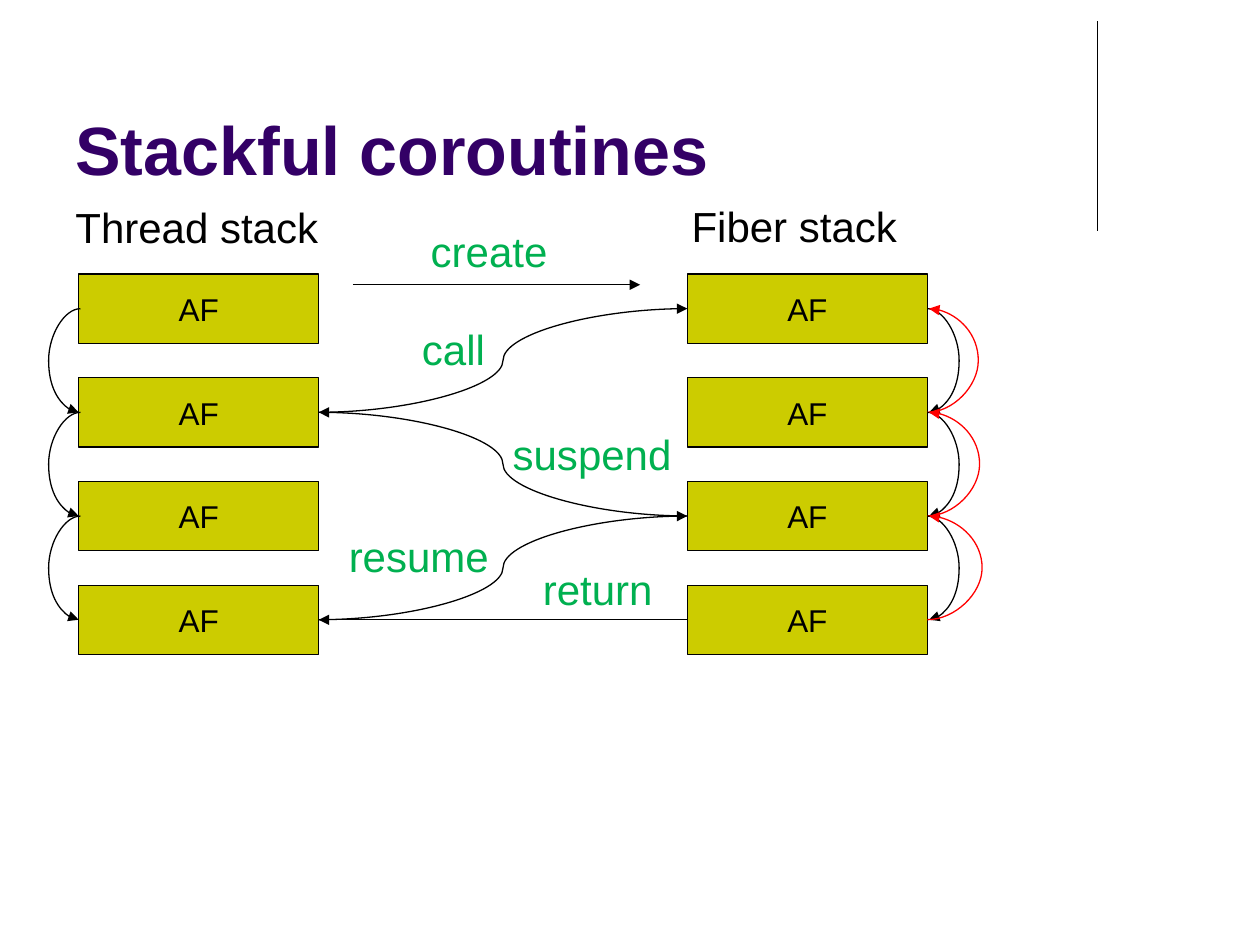
from lxml import etree
from pptx import Presentation
from pptx import util as u
from pptx.dml.color import RGBColor
from pptx.enum import shapes, text
from pptx.oxml.ns import qn

COLORS = {"ink": "000000", "title": "330066", "frame": "CCCC00",
          "label": "00B050", "unwind": "FF0000"}
COLUMNS, ROWS = 100, 75
FRAMES, PITCH, FRAME_HEIGHT = 4, 8.23, 5.5
SKEW = 0.14

deck = Presentation()
deck.slide_width, deck.slide_height = u.Inches(10), u.Inches(7.5)
page = deck.slides.add_slide(deck.slide_layouts[6])


def col(count):
    return round(deck.slide_width * count / COLUMNS)


def row(count):
    return round(deck.slide_height * count / ROWS)


def place(box):
    left, top, width, height = box
    return col(left), row(top), col(width), row(height)


def color(name):
    return RGBColor.from_string(COLORS[name])


def write(shape, words, size, ink, bold=False):
    shape.text_frame.text = words
    font = shape.text_frame.paragraphs[0].runs[0].font
    font.name, font.size, font.bold = "Arial", u.Pt(size), bold
    font.color.rgb = color(ink)


def add_label(box, words, size=24, ink="label", bold=False, wrap=False,
              anchor=text.MSO_ANCHOR.TOP):
    label = page.shapes.add_textbox(*place(box))
    label.text_frame.word_wrap = wrap
    label.text_frame.vertical_anchor = anchor
    write(label, words, size, ink, bold)


def add_line(start, end, ink="ink", curved=False, bulge=None, arrow=True):
    kind = shapes.MSO_CONNECTOR.CURVE if curved else shapes.MSO_CONNECTOR.STRAIGHT
    line = page.shapes.add_connector(
        kind, col(start[0]), row(start[1]), col(end[0]), row(end[1]))
    line.line.color.rgb = color(ink)
    line.line.width = u.Pt(0.75)
    properties = line._element.spPr
    etree.SubElement(properties, qn("a:effectLst"))
    if arrow:
        etree.SubElement(line.line._get_or_add_ln(), qn("a:tailEnd"), type="triangle")
    if bulge:
        guides = properties.find(qn("a:prstGeom")).get_or_add_avLst()
        etree.SubElement(guides, qn("a:gd"), name="adj1",
                         fmla=f"val {round(bulge / SKEW * 100000)}")
    return line


def add_stack(box):
    left, top, width, height = box
    frames = []
    for index in range(FRAMES):
        frame = page.shapes.add_shape(
            shapes.MSO_SHAPE.RECTANGLE,
            *place((left, top + index * PITCH, width, FRAME_HEIGHT)))
        frame.shadow.inherit = False
        frame.fill.solid()
        frame.fill.fore_color.rgb = color("frame")
        frame.line.color.rgb = color("ink")
        frame.line.width = u.Pt(0.75)
        frame.text_frame.word_wrap = False
        frame.text_frame.vertical_anchor = text.MSO_ANCHOR.MIDDLE
        write(frame, "AF", 18, "ink")
        frame.text_frame.paragraphs[0].alignment = text.PP_ALIGN.CENTER
        frames.append(frame)
    return frames


def add_header(box):
    add_line((87.1, 1.7), (87.1, 18.3), arrow=False)
    add_label(box, "Stackful coroutines", 39, "title", True, True,
              text.MSO_ANCHOR.BOTTOM)


def add_stack_links(thread_box, fiber_box):
    left, right = thread_box[0], fiber_box[0] + fiber_box[2]
    middles = [thread_box[1] + FRAME_HEIGHT / 2 + index * PITCH
               for index in range(FRAMES)]
    for upper, lower, reach in zip(middles, middles[1:], (4, 4.1, 4.3)):
        add_line((left + SKEW, upper), (left, lower), curved=True, bulge=2.5)
        add_line((right, upper), (right + SKEW, lower), curved=True, bulge=2.5)
        add_line((right, lower), (right + SKEW, upper), "unwind", True, reach)


def add_switches(box, thread, fiber):
    left, top, width, height = box
    right = left + width
    middles = [top + FRAME_HEIGHT / 2 + index * PITCH for index in range(FRAMES)]
    add_line((28, 22.6), (50.8, 22.6))
    add_line((left, middles[1]), (right, middles[0]), curved=True)
    add_line((right, middles[2]), (left, middles[1]), curved=True)
    add_line((left, middles[3]), (right, middles[2]), curved=True)
    finish = add_line((right, middles[3]), (left, middles[3]))
    finish.begin_connect(fiber[3], 1)
    finish.end_connect(thread[3], 3)
    for words, x, y, span in (("create", 33.2, 17.4, 11.4),
                              ("call", 32.5, 25.2, 7.1),
                              ("suspend", 39.7, 33.5, 14.8),
                              ("resume", 26.7, 41.6, 13.3),
                              ("return", 42.1, 44.2, 10.8)):
        add_label((x, y, span, 5), words)


def main():
    height = (FRAMES - 1) * PITCH + FRAME_HEIGHT
    thread_box = (6.25, 21.75, 19.05, height)
    fiber_box = (54.55, 21.75, 19.05, height)
    gap_left = thread_box[0] + thread_box[2]
    add_header((5, 1.3, 82.5, 14.2))
    add_label((5, 15.5, 21.5, 5), "Thread stack", ink="ink")
    add_label((53.9, 15.4, 18.5, 5), "Fiber stack", ink="ink")
    thread = add_stack(thread_box)
    fiber = add_stack(fiber_box)
    add_switches((gap_left, 21.75, fiber_box[0] - gap_left, height), thread, fiber)
    add_stack_links(thread_box, fiber_box)
    deck.save("out.pptx")


if __name__ == "__main__":
    main()
